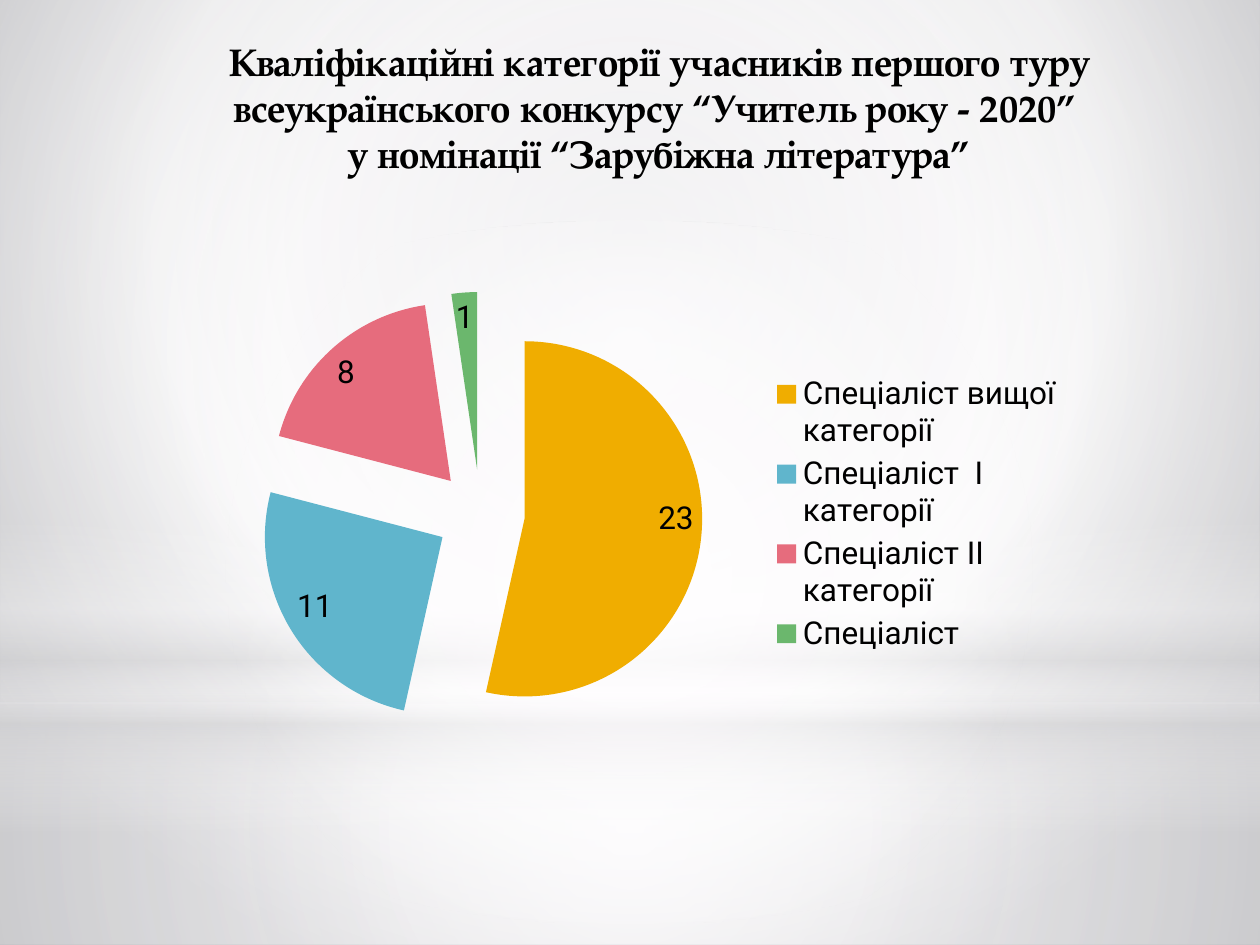
import pptx
import pptx.chart.data
import pptx.dml.color
import pptx.enum.chart
import pptx.enum.shapes
import pptx.enum.text
import pptx.oxml
import pptx.oxml.ns
import pptx.util

INK = "000000"


def color(value):
    return pptx.dml.color.RGBColor.from_string(value)


def set_gradient(owner, stops, direction):
    """Fill the gradient in owner with (position, colour, opacity) stops."""
    items = "".join(
        f'<a:gs pos="{place * 1000}"><a:srgbClr val="{tone}">'
        f'<a:alpha val="{opacity * 1000}"/></a:srgbClr></a:gs>'
        for place, tone, opacity in stops)
    old = owner.find(".//" + pptx.oxml.ns.qn("a:gradFill"))
    new = pptx.oxml.parse_xml(
        f'<a:gradFill {pptx.oxml.ns.nsdecls("a")} rotWithShape="1">'
        f'<a:gsLst>{items}</a:gsLst>{direction}</a:gradFill>')
    old.getparent().replace(old, new)


def_path = '<a:path path="circle"><a:fillToRect l="{}" t="{}" r="{}" b="{}"/></a:path>'
CENTER = def_path.format(50000, 50000, 50000, 50000)
HIGH = def_path.format(20000, 10000, 20000, 60000)
DOWN = '<a:lin ang="5400000" scaled="0"/>'

deck = pptx.Presentation()
deck.slide_width = pptx.util.Inches(10)
deck.slide_height = pptx.util.Inches(7.5)
page = deck.slides.add_slide(deck.slide_layouts[6])

# Background
page.background.fill.gradient()
set_gradient(page.element, [(0, "CBCBCE", 100), (60, "FFFFFF", 100),
                            (100, "A9A9AE", 100)], HIGH)

# Full-width bands of light: shape, top, height, stops, direction
RECTANGLE = pptx.enum.shapes.MSO_SHAPE.RECTANGLE
OVAL = pptx.enum.shapes.MSO_SHAPE.OVAL
WHITE, GRAY = "FFFEFF", "D4D4D6"
bands = [
    (RECTANGLE, 5.58, 1.92, [(0, WHITE, 91), (37, WHITE, 76), (100, GRAY, 79)], CENTER),
    (RECTANGLE, 0, 5.58, [(0, WHITE, 89), (48, WHITE, 62), (100, GRAY, 79)], CENTER),
    (RECTANGLE, 4.12, 2.5, [(0, WHITE, 0), (29, WHITE, 30), (45, GRAY, 40),
                            (55, WHITE, 26), (65, GRAY, 60), (100, WHITE, 0)], DOWN),
    (OVAL, 1.75, 5.58, [(0, WHITE, 100), (56, WHITE, 0)], CENTER),
]
for kind, top, height, stops, direction in bands:
    band = page.shapes.add_shape(kind, 0, pptx.util.Inches(top),
                                 deck.slide_width, pptx.util.Inches(height))
    band.shadow.inherit = False
    band.line.fill.background()
    band.fill.gradient()
    set_gradient(band.element, stops, direction)

# Title
box = page.shapes.add_textbox(*map(pptx.util.Inches, (0.67, 0.25, 9.13, 1.08)))
box.text_frame.word_wrap = True
box.text_frame.vertical_anchor = pptx.enum.text.MSO_ANCHOR.TOP
para = box.text_frame.paragraphs[0]
para.alignment = pptx.enum.text.PP_ALIGN.CENTER
lines = ["Кваліфікаційні категорії учасників першого туру "
         "всеукраїнського конкурсу “Учитель року - 2020” ",
         "у номінації “Зарубіжна література”"]
for number, line in enumerate(lines):
    if number:
        para.add_line_break()
    span = para.add_run()
    span.text = line
    span.font.name = "TeX Gyre Pagella"
    span.font.size = pptx.util.Pt(22)
    span.font.bold = True
    span.font.color.rgb = color(INK)

# Pie of categories
slices = [("Спеціаліст вищої категорії", 23, "F0AD00"),
          ("Спеціаліст  І категорії", 11, "60B5CC"),
          ("Спеціаліст ІІ категорії", 8, "E66C7D"),
          ("Спеціаліст", 1, "6BB76D")]
data = pptx.chart.data.CategoryChartData()
data.categories = [name for name, count, tone in slices]
data.add_series("Series 1", [count for name, count, tone in slices])
chart = page.shapes.add_chart(
    pptx.enum.chart.XL_CHART_TYPE.PIE,
    *map(pptx.util.Inches, (1.54, 2.18, 7, 3.8)), data).chart
chart.has_title = False
chart.font.name = "Roboto"
chart.font.size = pptx.util.Pt(18)
chart.font.color.rgb = color(INK)
chart.has_legend = True
chart.legend.position = pptx.enum.chart.XL_LEGEND_POSITION.RIGHT
chart.legend.include_in_layout = False

plot = chart.plots[0]
plot.vary_by_categories = True
plot.has_data_labels = True
plot.data_labels.show_value = True
plot.data_labels.show_percentage = False
plot.data_labels.position = pptx.enum.chart.XL_LABEL_POSITION.INSIDE_END
series = plot.series[0]
for index, (name, count, tone) in enumerate(slices):
    fill = series.points[index].format.fill
    fill.solid()
    fill.fore_color.rgb = color(tone)

# Pull every slice out by a quarter of the radius
explosion = pptx.oxml.parse_xml(
    f'<c:explosion {pptx.oxml.ns.nsdecls("c")} val="25"/>')
series._element.find(pptx.oxml.ns.qn("c:dPt")).addprevious(explosion)

deck.save("out.pptx")
